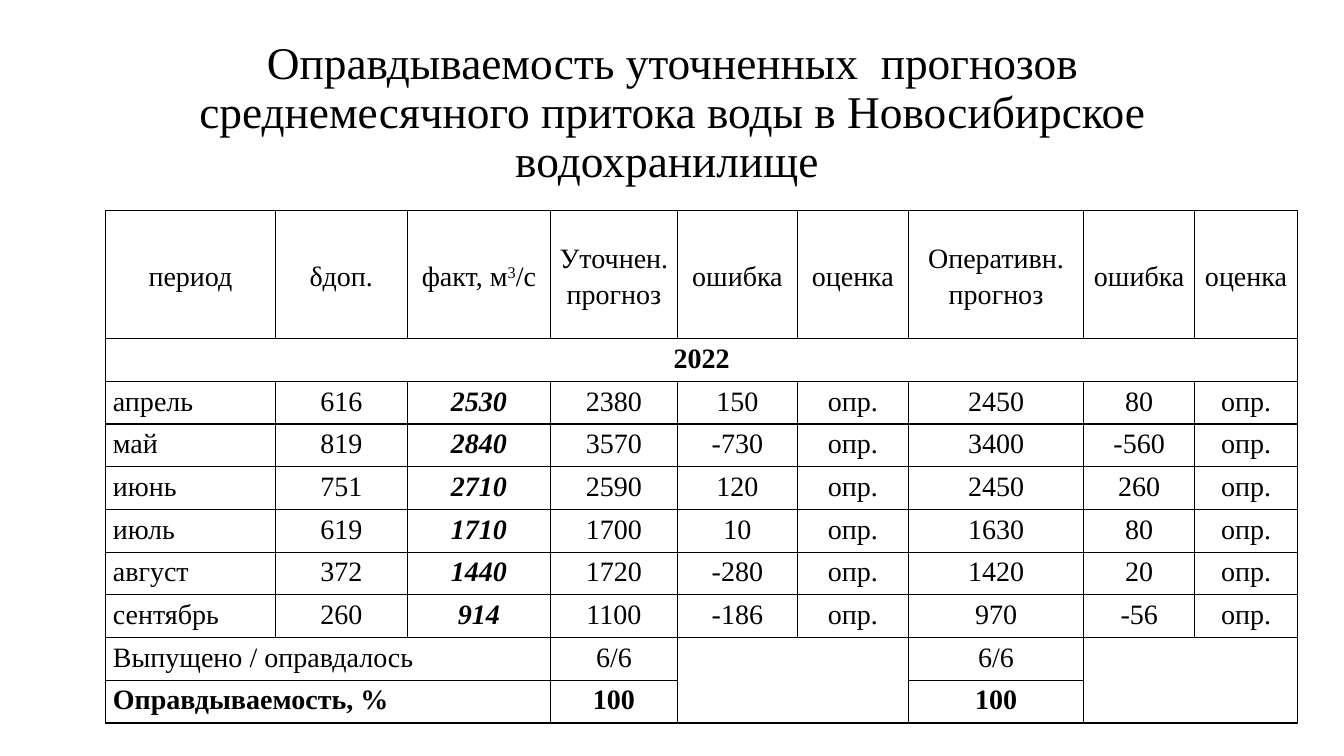
from dataclasses import dataclass

from lxml import etree
from pptx import Presentation
from pptx.dml.color import RGBColor
from pptx.enum import text
from pptx.oxml import ns
from pptx.util import Inches, Pt


@dataclass(frozen=True)
class Theme:
    font: str = "Times New Roman"
    ink: str = "000000"
    title_size: float = 32.4
    table_size: float = 20
    border_width: float = 1


THEME = Theme()
LEFT, CENTER = text.PP_ALIGN.LEFT, text.PP_ALIGN.CENTER
TITLE = "Оправдываемость уточненных  прогнозов среднемесячного притока воды в Новосибирское водохранилище "
HEADER = ["период", "δдоп.", "факт, м^3^/с", "Уточнен.прогноз", "ошибка", "оценка",
          "Оперативн. прогноз", "ошибка", "оценка"]
MONTHS = [
    ("апрель", 616, 2530, 2380, 2450),
    ("май", 819, 2840, 3570, 3400),
    ("июнь", 751, 2710, 2590, 2450),
    ("июль", 619, 1710, 1700, 1630),
    ("август", 372, 1440, 1720, 1420),
    ("сентябрь", 260, 914, 1100, 970),
]
COLUMN_WIDTHS = [1.68, 1.31, 1.42, 1.26, 1.19, 1.1, 1.74, 1.1, 1.02]
HEADER_HEIGHT, ROW_HEIGHT = 1.27, 0.424
FACT_COLUMN = 2


def month_row(month, tolerance, fact, refined, operational):
    row = [month, tolerance, fact]
    for forecast in (refined, operational):
        row += [forecast, fact - forecast, "опр."]
    return row


def summary_row(label, value):
    return [label, "", "", value, "", "", value, "", ""]


def apply(target, values):
    for name, value in values.items():
        setattr(target, name, value)


def write(paragraph, content, size, **styles):
    for index, part in enumerate(str(content).split("^")):
        run = paragraph.add_run()
        run.text = part
        apply(run.font, {"name": THEME.font, "size": Pt(size), **styles})
        run.font.color.rgb = RGBColor.from_string(THEME.ink)
        if index % 2:
            run.font._element.set("baseline", "30000")


def add_borders(cell):
    properties = cell._tc.get_or_add_tcPr()
    for index, side in enumerate(("a:lnL", "a:lnR", "a:lnT", "a:lnB")):
        line = etree.Element(ns.qn(side), w=str(Pt(THEME.border_width)))
        fill = etree.SubElement(line, ns.qn("a:solidFill"))
        etree.SubElement(fill, ns.qn("a:srgbClr"), val=THEME.ink)
        properties.insert(index, line)


def fill_cell(cell, content, alignment, anchor, **styles):
    apply(cell, {"margin_left": Inches(0.07), "margin_right": Inches(0.07),
                 "margin_top": 0, "margin_bottom": 0, "vertical_anchor": anchor})
    cell.fill.background()
    add_borders(cell)
    paragraph = cell.text_frame.paragraphs[0]
    apply(paragraph, {"alignment": alignment, "line_spacing": 1.15})
    if content != "":
        write(paragraph, content, THEME.table_size, **styles)


def add_title(slide):
    title = slide.shapes.title
    apply(title, {"left": Inches(0.92), "top": Inches(0.4),
                  "width": Inches(11.5), "height": Inches(1.45)})
    apply(title.text_frame, {"word_wrap": True, "auto_size": text.MSO_AUTO_SIZE.NONE,
                             "vertical_anchor": text.MSO_ANCHOR.MIDDLE})
    paragraph = title.text_frame.paragraphs[0]
    apply(paragraph, {"alignment": CENTER, "line_spacing": 0.9})
    write(paragraph, TITLE, THEME.title_size)


def add_forecast_table(slide):
    rows = [HEADER, ["2022"] + [""] * 8]
    rows += [month_row(*month) for month in MONTHS]
    rows += [summary_row("Выпущено / оправдалось", "6/6"),
             summary_row("Оправдываемость, %", 100)]
    last = len(rows) - 1
    heights = [HEADER_HEIGHT] + [ROW_HEIGHT] * last
    table = slide.shapes.add_table(
        len(rows), len(HEADER), Inches(1.05), Inches(2.09),
        Inches(sum(COLUMN_WIDTHS)), Inches(sum(heights))).table
    apply(table, {"first_row": False, "horz_banding": False})
    for column, width in zip(table.columns, COLUMN_WIDTHS):
        column.width = Inches(width)
    for row, height in zip(table.rows, heights):
        row.height = Inches(height)

    for row, contents in enumerate(rows):
        anchor = text.MSO_ANCHOR.TOP if row else text.MSO_ANCHOR.MIDDLE
        for column, content in enumerate(contents):
            is_fact = column == FACT_COLUMN and row > 1
            alignment = LEFT if column == 0 and row > 1 else CENTER
            fill_cell(table.cell(row, column), content, alignment, anchor,
                      bold=is_fact or row in (1, last), italic=is_fact)

    merges = [(1, 0, 1, 8), (last - 1, 0, last - 1, 2), (last, 0, last, 2),
              (last - 1, 4, last, 5), (last - 1, 7, last, 8)]
    for top, left, bottom, right in merges:
        table.cell(top, left).merge(table.cell(bottom, right))


def main():
    presentation = Presentation()
    apply(presentation, {"slide_width": Inches(13.33), "slide_height": Inches(7.5)})
    slide = presentation.slides.add_slide(presentation.slide_layouts[5])
    add_title(slide)
    add_forecast_table(slide)
    presentation.save("out.pptx")


if __name__ == "__main__":
    main()
